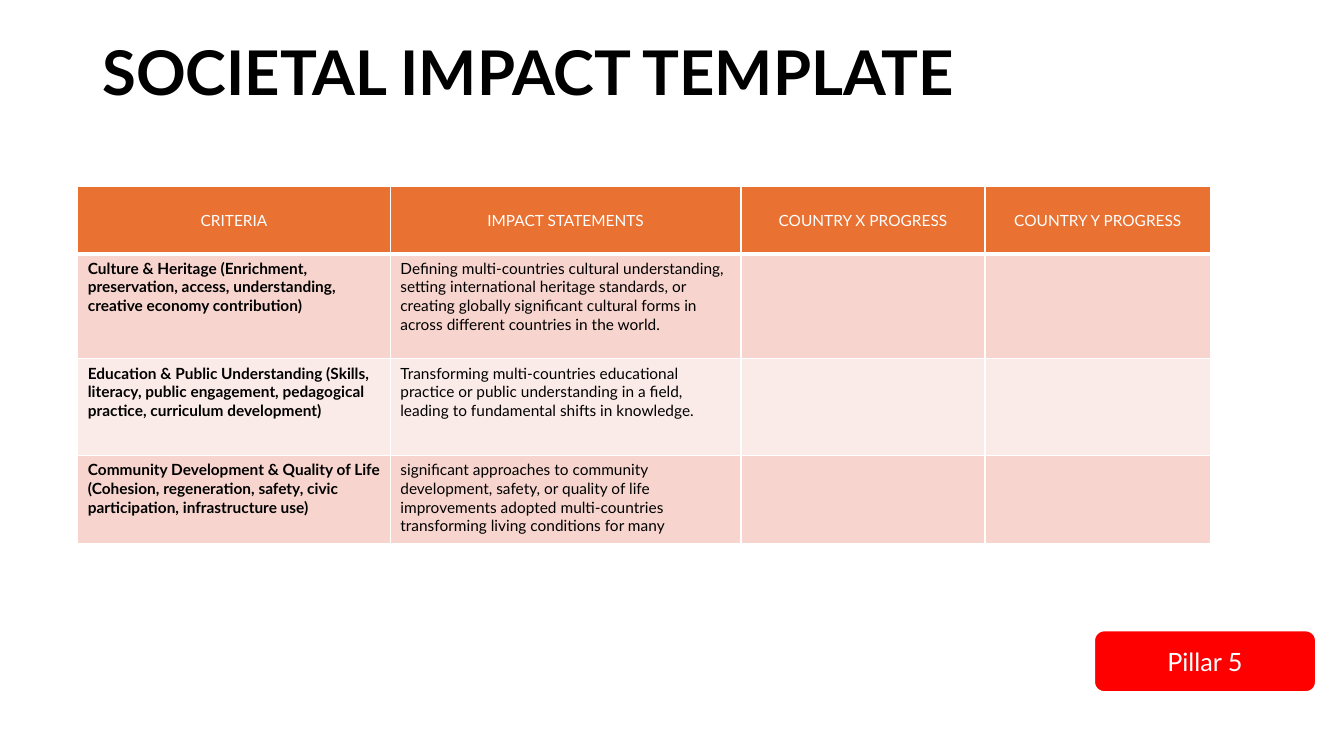
from dataclasses import dataclass

from lxml import etree
from pptx import Presentation
from pptx.dml.color import RGBColor
from pptx.enum import shapes, text
from pptx.oxml import ns
from pptx.util import Pt

FONT = "Lato"
BLACK = RGBColor(0x00, 0x00, 0x00)
WHITE = RGBColor(0xFF, 0xFF, 0xFF)
RED = RGBColor(0xFF, 0x00, 0x00)
ORANGE = RGBColor(0xE9, 0x71, 0x32)
BANDS = (RGBColor(0xF7, 0xD5, 0xCE), RGBColor(0xFB, 0xEB, 0xE8))


@dataclass(frozen=True)
class TextStyle:
    size: float
    color: RGBColor
    bold: bool = False
    align: text.PP_ALIGN = text.PP_ALIGN.LEFT


@dataclass(frozen=True)
class Criterion:
    name: str
    impact: str
    height: float


TITLE = TextStyle(44, BLACK, bold=True)
HEADER = TextStyle(11, WHITE, align=text.PP_ALIGN.CENTER)
CRITERION = TextStyle(11, BLACK, bold=True)
IMPACT = TextStyle(11, BLACK)
PILLAR = TextStyle(18, WHITE, align=text.PP_ALIGN.CENTER)

HEADINGS = ("CRITERIA", "IMPACT STATEMENTS", "COUNTRY X PROGRESS", "COUNTRY Y PROGRESS")
COLUMN_WIDTHS = (223.2, 250.56, 174.24, 161.28)
HEADER_HEIGHT = 48.24
CRITERIA = (
    Criterion(
        "Culture & Heritage (Enrichment, preservation, access, understanding, "
        "creative economy contribution)",
        "Defining multi-countries cultural understanding, setting international heritage "
        "standards, or creating globally significant cultural forms in across different "
        "countries in the world.",
        74.88,
    ),
    Criterion(
        "Education & Public Understanding (Skills, literacy, public engagement, "
        "pedagogical practice, curriculum development)",
        "Transforming multi-countries educational practice or public understanding in a "
        "field, leading to fundamental shifts in knowledge.",
        69.12,
    ),
    Criterion(
        "Community Development & Quality of Life (Cohesion, regeneration, safety, civic "
        "participation, infrastructure use)",
        "significant approaches to community development, safety, or quality of life "
        "improvements adopted multi-countries transforming living conditions for many",
        62.64,
    ),
)


def write(frame, content: str, style: TextStyle):
    paragraph = frame.paragraphs[0]
    paragraph.alignment = style.align
    run = paragraph.add_run()
    run.text = content
    run.font.name = FONT
    run.font.size = Pt(style.size)
    run.font.bold = style.bold
    run.font.color.rgb = style.color
    return paragraph


def format_cell(cell, fill: RGBColor, bottom_width: float = 1) -> None:
    properties = cell._tc.get_or_add_tcPr()
    for side, width in (("L", 1), ("R", 1), ("T", 1), ("B", bottom_width)):
        line = etree.SubElement(properties, ns.qn(f"a:ln{side}"), w=str(Pt(width)))
        solid = etree.SubElement(line, ns.qn("a:solidFill"))
        etree.SubElement(solid, ns.qn("a:srgbClr"), val=str(WHITE))
    cell.fill.solid()
    cell.fill.fore_color.rgb = fill


def add_title(slide) -> None:
    box = slide.shapes.add_textbox(Pt(66), Pt(1.44), Pt(828), Pt(104.4))
    frame = box.text_frame
    frame.word_wrap = True
    frame.vertical_anchor = text.MSO_ANCHOR.MIDDLE
    write(frame, "SOCIETAL IMPACT TEMPLATE", TITLE).line_spacing = 0.9


def add_impact_table(slide) -> None:
    heights = (HEADER_HEIGHT, *(criterion.height for criterion in CRITERIA))
    table = slide.shapes.add_table(
        len(heights), len(COLUMN_WIDTHS),
        Pt(55.6), Pt(133.2), Pt(sum(COLUMN_WIDTHS)), Pt(sum(heights)),
    ).table
    for column, width in zip(table.columns, COLUMN_WIDTHS):
        column.width = Pt(width)
    for row, height in zip(table.rows, heights):
        row.height = Pt(height)
    for cell, heading in zip(table.rows[0].cells, HEADINGS):
        format_cell(cell, ORANGE, bottom_width=3)
        cell.vertical_anchor = text.MSO_ANCHOR.MIDDLE
        write(cell.text_frame, heading, HEADER)
    for index, criterion in enumerate(CRITERIA):
        cells = list(table.rows[index + 1].cells)
        for cell in cells:
            format_cell(cell, BANDS[index % len(BANDS)])
        write(cells[0].text_frame, criterion.name, CRITERION)
        write(cells[1].text_frame, criterion.impact, IMPACT)


def add_pillar_label(slide) -> None:
    shape = slide.shapes.add_shape(
        shapes.MSO_SHAPE.ROUNDED_RECTANGLE, Pt(781.2), Pt(450), Pt(159.12), Pt(44.64)
    )
    shape.shadow.inherit = False
    shape.fill.solid()
    shape.fill.fore_color.rgb = RED
    shape.line.color.rgb = WHITE
    shape.line.width = Pt(2)
    shape.text_frame.vertical_anchor = text.MSO_ANCHOR.MIDDLE
    write(shape.text_frame, "Pillar 5", PILLAR)


def main() -> None:
    presentation = Presentation()
    presentation.slide_width = Pt(960)
    presentation.slide_height = Pt(540)
    slide = presentation.slides.add_slide(presentation.slide_layouts[6])
    add_title(slide)
    add_impact_table(slide)
    add_pillar_label(slide)
    presentation.save("out.pptx")


if __name__ == "__main__":
    main()
